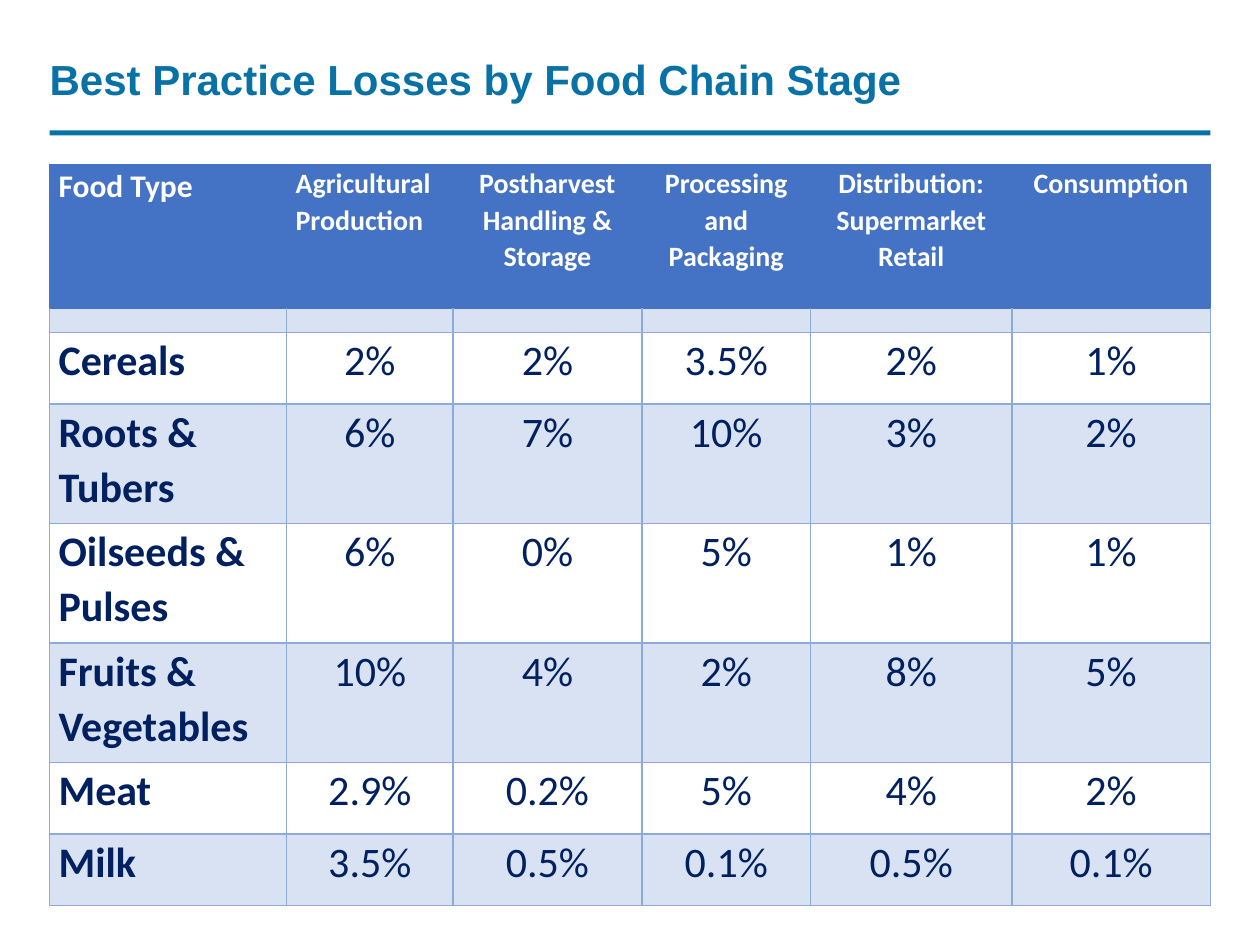
"""Build the slide on best practice losses by food chain stage."""
from dataclasses import dataclass

from lxml.etree import SubElement
from pptx import Presentation
from pptx.dml.color import RGBColor
from pptx.enum.shapes import MSO_SHAPE as Shape
from pptx.enum.text import MSO_ANCHOR as Anchor, PP_ALIGN as Align
from pptx.oxml.ns import qn
from pptx.util import Cm, Pt

TEAL = RGBColor(0x08, 0x72, 0xA6)
BLUE = RGBColor(0x44, 0x72, 0xC4)
BAND = RGBColor(0xD9, 0xE2, 0xF3)
GRID = RGBColor(0x8E, 0xAA, 0xDB)
NAVY = RGBColor(0x00, 0x20, 0x60)
WHITE = RGBColor(0xFF, 0xFF, 0xFF)

LEFT, WIDTH = Cm(1), Cm(23.4)


@dataclass
class Column:
    head: str
    width: float
    tab: float = 0


@dataclass
class Row:
    height: float
    values: list[str]


@dataclass
class TextStyle:
    size: int
    color: RGBColor
    bold: bool
    align: Align


COLUMNS = [
    Column("Food Type", 4.78),
    Column("Agricultural Production", 3.35, 0.64),
    Column("Postharvest Handling & Storage", 3.81, 0.61),
    Column("Processing and Packaging", 3.4, 0.81),
    Column("Distribution: Supermarket Retail", 4.06, 0.81),
    Column("Consumption", 4, 0.79),
]
ROWS = [
    Row(2.9, [c.head for c in COLUMNS]),
    Row(0.48, [""] * len(COLUMNS)),
    Row(1.44, ["Cereals", "2%", "2%", "3.5%", "2%", "1%"]),
    Row(2.41, ["Roots & Tubers", "6%", "7%", "10%", "3%", "2%"]),
    Row(2.41, ["Oilseeds & Pulses", "6%", "0%", "5%", "1%", "1%"]),
    Row(2.41, ["Fruits & Vegetables", "10%", "4%", "2%", "8%", "5%"]),
    Row(1.44, ["Meat", "2.9%", "0.2%", "5%", "4%", "2%"]),
    Row(1.44, ["Milk", "3.5%", "0.5%", "0.1%", "0.5%", "0.1%"]),
]


def cell_style(i: int, j: int) -> TextStyle:
    if i == 0:
        return TextStyle(16 if j else 18, WHITE, True, Align.CENTER if j > 1 else Align.LEFT)
    return TextStyle(24, NAVY, j == 0, Align.CENTER if j else Align.LEFT)


def set_border(cell, side: str, color: RGBColor) -> None:
    ln = SubElement(cell._tc.get_or_add_tcPr(), qn(f"a:ln{side}"), w=str(Pt(1)))
    SubElement(SubElement(ln, qn("a:solidFill")), qn("a:srgbClr"), val=str(color))


def add_decimal_tab(p, pos: float) -> None:
    tabs = SubElement(p._p.get_or_add_pPr(), qn("a:tabLst"))
    SubElement(tabs, qn("a:tab"), pos=str(Cm(pos)), algn="dec")


def fill_cell(cell, i: int, j: int, text: str) -> None:
    for side in "LRTB":
        set_border(cell, side, BLUE if i == 0 or (i == 1 and side == "T") else GRID)
    cell.fill.solid()
    cell.fill.fore_color.rgb = BLUE if i == 0 else BAND if i % 2 else WHITE
    cell.margin_left = cell.margin_right = Cm(0.18)
    cell.margin_top = cell.margin_bottom = 0
    p = cell.text_frame.paragraphs[0]
    if not text:
        SubElement(p._p, qn("a:endParaRPr"), sz="800")
        return
    style = cell_style(i, j)
    p.text = text
    p.alignment, p.line_spacing = style.align, 1.07
    if i and j:
        add_decimal_tab(p, COLUMNS[j].tab)
    f = p.runs[0].font
    f.name, f.size, f.bold = "Calibri", Pt(style.size), style.bold
    f.color.rgb = style.color


def add_title(s, text: str) -> None:
    sp = s.shapes.title
    sp.left, sp.top, sp.width, sp.height = LEFT, Cm(0.91), WIDTH, Cm(1.35)
    tf = sp.text_frame
    tf.text = text
    tf.margin_left = tf.margin_right = tf.margin_top = tf.margin_bottom = 0
    tf.vertical_anchor, tf.word_wrap = Anchor.MIDDLE, True
    p = tf.paragraphs[0]
    p.alignment = Align.LEFT
    f = p.runs[0].font
    f.name, f.size, f.bold = "Arial", Pt(24), True
    f.color.rgb = TEAL


def add_rule(s) -> None:
    sp = s.shapes.add_shape(Shape.RECTANGLE, LEFT, Cm(2.63), WIDTH, Cm(0.1))
    sp.shadow.inherit = False
    sp.fill.solid()
    sp.fill.fore_color.rgb = TEAL
    sp.line.fill.background()


def add_loss_table(s) -> None:
    height = Cm(sum(row.height for row in ROWS))
    frame = s.shapes.add_table(len(ROWS), len(COLUMNS), LEFT, Cm(3.32), WIDTH, height)
    table = frame.table
    table.horz_banding = False
    for j, column in enumerate(COLUMNS):
        table.columns[j].width = Cm(column.width)
    for i, row in enumerate(ROWS):
        table.rows[i].height = Cm(row.height)
        for j, text in enumerate(row.values):
            fill_cell(table.cell(i, j), i, j, text)


def main() -> None:
    prs = Presentation()
    prs.slide_width, prs.slide_height = Cm(25.4), Cm(19.05)
    s = prs.slides.add_slide(prs.slide_layouts[5])
    add_rule(s)
    add_title(s, "Best Practice Losses by Food Chain Stage")
    add_loss_table(s)
    prs.save("out.pptx")


if __name__ == "__main__":
    main()
